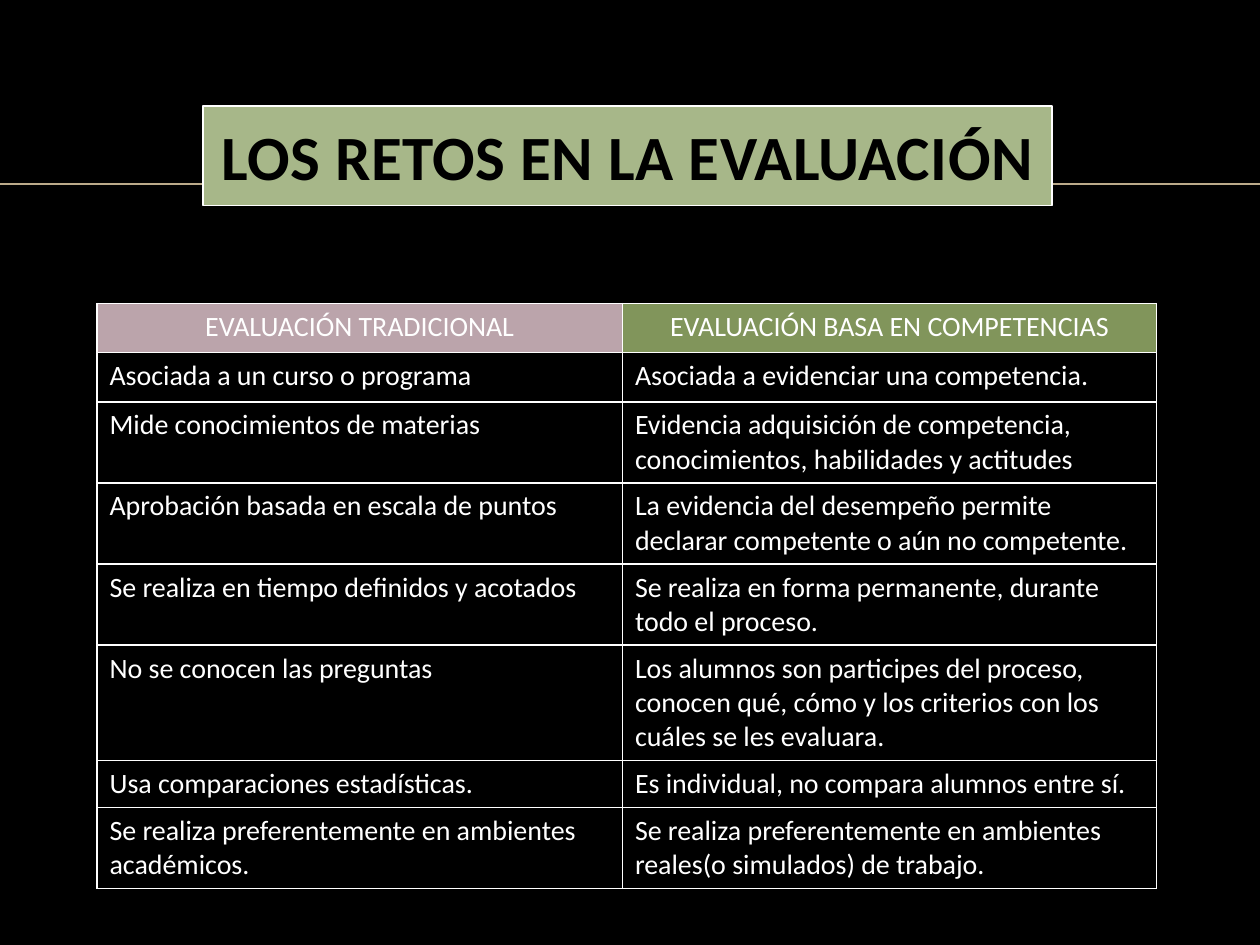
from lxml import etree
from pptx import Presentation
from pptx import util as u
from pptx.dml.color import RGBColor
from pptx.enum import shapes, text
from pptx.oxml import ns

COLORS = {"background": "000000", "rule": "BBAA8A", "banner": "A7B789",
          "traditional": "BBA4AB", "competency": "81955B",
          "light": "FFFFFF", "dark": "000000"}
FONT = "Calibri"
WIDTH, HEIGHT = u.Inches(10), u.Inches(7.5)
COLUMN_WIDTHS = (4.17, 4.24)
ROW_HEIGHTS = (0.39, 0.39, 0.59, 0.53, 0.59, 0.84, 0.33, 0.48)
COMPARISON = (
    ("EVALUACIÓN TRADICIONAL", "EVALUACIÓN BASA EN COMPETENCIAS"),
    ("Asociada a un curso o programa", "Asociada a evidenciar una competencia."),
    ("Mide conocimientos de materias",
     "Evidencia adquisición de competencia, conocimientos, habilidades y actitudes"),
    ("Aprobación basada en escala de puntos",
     "La evidencia del desempeño permite declarar competente o aún no competente."),
    ("Se realiza en tiempo definidos y acotados",
     "Se realiza en forma permanente, durante todo el proceso."),
    ("No se conocen las preguntas",
     "Los alumnos son participes del proceso, conocen qué, cómo y los criterios "
     "con los cuáles se les evaluara."),
    ("Usa comparaciones estadísticas.", "Es individual, no compara alumnos entre sí."),
    ("Se realiza preferentemente en ambientes académicos.",
     "Se realiza preferentemente en ambientes reales(o simulados) de trabajo."),
)


def rgb(role):
    """Return the colour that plays the given role."""
    return RGBColor.from_string(COLORS[role])


def paint(fill, role):
    """Fill with one solid colour."""
    fill.solid()
    fill.fore_color.rgb = rgb(role)


def style(paragraph, size, role, bold=False, align=text.PP_ALIGN.LEFT):
    """Set the font and alignment of a paragraph."""
    paragraph.alignment = align
    font = paragraph.font
    font.name, font.size, font.bold = FONT, u.Pt(size), bold
    font.color.rgb = rgb(role)


def add_rule(slide, share):
    """Draw the full-width rule behind everything else."""
    y = int(HEIGHT * share)
    rule = slide.shapes.add_connector(shapes.MSO_CONNECTOR.STRAIGHT, 0, y, WIDTH, y)
    rule.line.color.rgb = rgb("rule")
    rule.line.width = u.Pt(1)
    etree.SubElement(rule._element.spPr, ns.qn("a:effectLst"))
    slide.shapes._spTree.insert(2, rule._element)


def set_banner(slide, wording):
    """Turn the title placeholder into the framed banner."""
    banner = slide.shapes.title
    banner.left, banner.top = u.Inches(1.61), u.Inches(0.84)
    banner.width, banner.height = u.Inches(6.74), u.Inches(0.79)
    paint(banner.fill, "banner")
    banner.line.color.rgb = rgb("light")
    banner.line.width = u.Pt(1)
    frame = banner.text_frame
    frame.text = wording
    frame.word_wrap = True
    frame.auto_size = text.MSO_AUTO_SIZE.NONE
    frame.vertical_anchor = text.MSO_ANCHOR.MIDDLE
    heading = frame.paragraphs[0]
    heading.space_before = u.Pt(6)
    style(heading, 36, "dark", True, text.PP_ALIGN.CENTER)
    heading.runs[0]._r.get_or_add_rPr().set("spc", "30")


def add_borders(cell):
    """Frame a cell with thin light lines, placed before its fill."""
    properties = cell._tc.get_or_add_tcPr()
    for position, side in enumerate(("lnL", "lnR", "lnT", "lnB")):
        border = etree.Element(ns.qn(f"a:{side}"), w=str(u.Pt(1)))
        solid = etree.SubElement(border, ns.qn("a:solidFill"))
        etree.SubElement(solid, ns.qn("a:srgbClr"), val=COLORS["light"])
        properties.insert(position, border)


def fill_cell(cell, wording, fill_role=None):
    """Write one cell; a fill role marks it as a column heading."""
    cell.text = wording
    if fill_role:
        paint(cell.fill, fill_role)
    else:
        cell.fill.background()
    align = text.PP_ALIGN.CENTER if fill_role else text.PP_ALIGN.LEFT
    style(cell.text_frame.paragraphs[0], 16, "light", align=align)
    add_borders(cell)


def add_comparison(slide):
    """Add the table that sets both kinds of evaluation side by side."""
    comparison = slide.shapes.add_table(
        len(COMPARISON), len(COLUMN_WIDTHS), u.Inches(0.77), u.Inches(2.41),
        u.Inches(sum(COLUMN_WIDTHS)), u.Inches(sum(ROW_HEIGHTS))).table
    comparison.first_row = comparison.horz_banding = False
    for column, width in zip(comparison.columns, COLUMN_WIDTHS):
        column.width = u.Inches(width)
    for row, height in zip(comparison.rows, ROW_HEIGHTS):
        row.height = u.Inches(height)
    for r, wordings in enumerate(COMPARISON):
        roles = (None, None) if r else ("traditional", "competency")
        for c, (wording, role) in enumerate(zip(wordings, roles)):
            fill_cell(comparison.cell(r, c), wording, role)


def main():
    """Build and save the slide."""
    deck = Presentation()
    deck.slide_width, deck.slide_height = WIDTH, HEIGHT
    slide = deck.slides.add_slide(deck.slide_layouts.get_by_name("Title Only"))
    paint(slide.background.fill, "background")
    set_banner(slide, "LOS RETOS EN LA EVALUACIÓN")
    add_rule(slide, 0.195)
    add_comparison(slide)
    deck.save("out.pptx")


if __name__ == "__main__":
    main()
